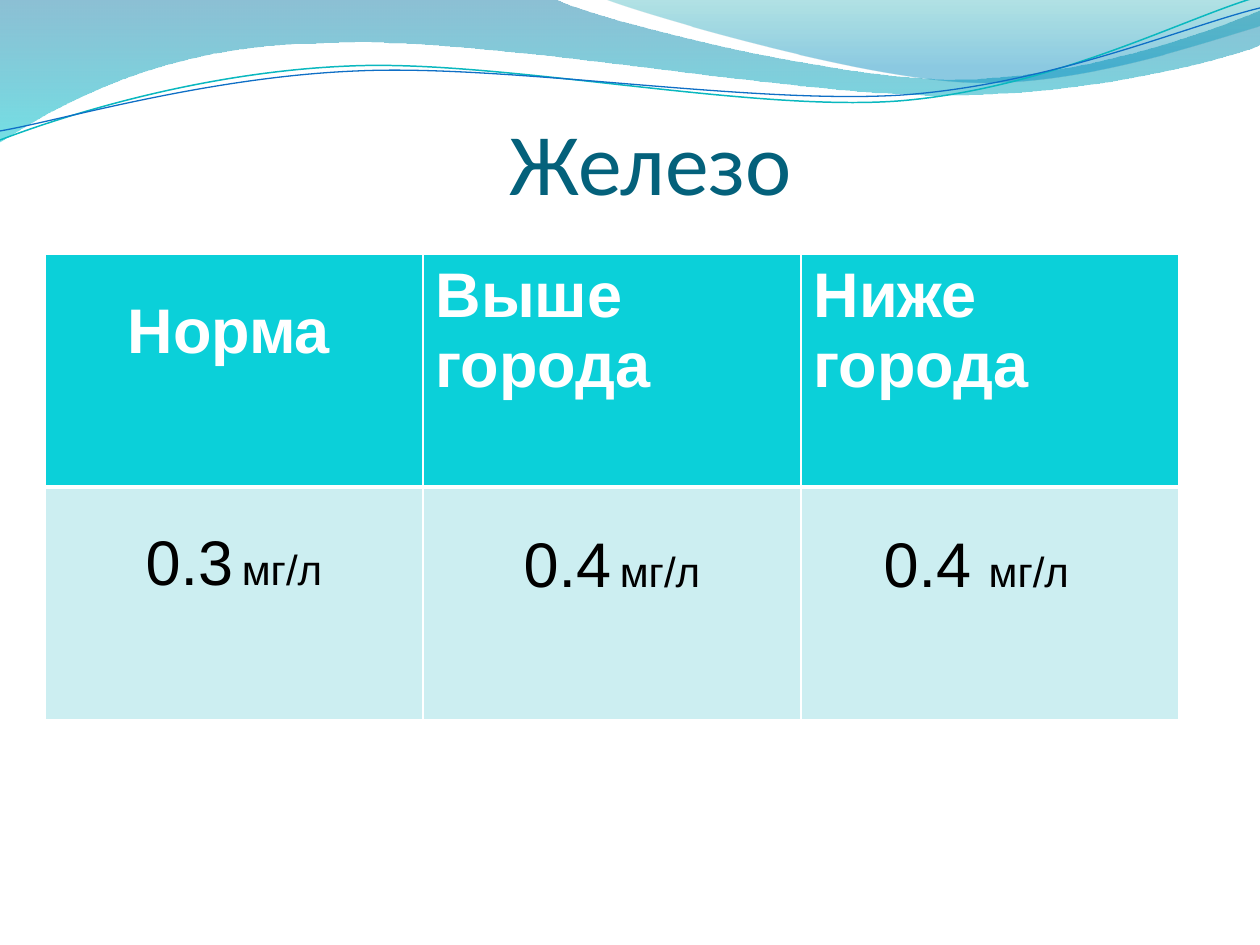
"""Builds the slide on iron content: a wave header, a title and a table."""
from typing import NamedTuple, Optional

from lxml import etree
from pptx import Presentation
from pptx.dml.color import RGBColor
from pptx.enum.text import MSO_ANCHOR, PP_ALIGN
from pptx.oxml.ns import qn
from pptx.util import Pt

BOTTOM = MSO_ANCHOR.BOTTOM
TOP = MSO_ANCHOR.TOP
CENTER = PP_ALIGN.CENTER
PX = 914400 / 126
COLORS = {
    "title": "04617B", "header": "0BD0D9", "body": "CCEEF1",
    "white": "FFFFFF", "black": "000000",
    "deep_blue": "0074A1", "aqua": "00C6CF", "teal": "00A1A9", "sky": "008BBF",
    "teal_line": "0AB8BF", "blue_line": "0F6FC6",
}


class Stop(NamedTuple):
    position: float
    color: str
    opacity: int


class Wave(NamedTuple):
    start: tuple
    segments: tuple
    stops: tuple = ()
    line: Optional[str] = None
    width: float = 0


class Entry(NamedTuple):
    runs: tuple
    indent: int = 0
    top: int = 6


WAVES = (
    Wave((0, -1), (
        (554, -1), (600, 21, 837, 79, 955, 79), (1075, 79, 1207, 33, 1260, 11),
        (1261, 45), (1239, 55, 1096, 96, 940, 95), (784, 95, 481, 35, 324, 43),
        (163, 44, 58, 105, -1, 142), (0, -1)),
        stops=(Stop(0, "deep_blue", 45), Stop(1, "aqua", 55))),
    Wave((604, -1), (
        (641, 14, 859, 78, 969, 82), (1079, 87, 1211, 40, 1260, 26),
        (1260, 0), (604, -1)),
        stops=(Stop(0, "teal", 30), Stop(0.8, "sky", 45))),
    Wave((0, 140), (
        (60, 117, 199, 72, 349, 66), (498, 59, 747, 112, 898, 101),
        (1050, 89, 1182, 19, 1257, -3)), line="teal_line", width=0.85),
    Wave((0, 131), (
        (59, 121, 207, 77, 357, 71), (508, 64, 752, 105, 903, 95),
        (1053, 84, 1186, 26, 1260, 8)), line="blue_line", width=0.75),
)

HEADINGS = (
    Entry((("Норма", 36),), indent=70, top=42),
    Entry((("Выше города", 36),)),
    Entry((("Ниже города", 36),)),
)
READINGS = (
    Entry((("0.3", 36), (" ", 18), ("мг/л", 24)), indent=88, top=42),
    Entry((("0.4", 36), (" ", 18), ("мг/л", 24)), indent=88, top=44),
    Entry((("0.4 ", 36), ("мг/л", 24)), indent=70, top=44),
)


def px(length: float) -> int:
    """Turn pixels into EMU."""
    return round(length * PX)


def rgb(name: str) -> RGBColor:
    """Look up a named colour."""
    return RGBColor.from_string(COLORS[name])


def bend(shape, segments: tuple) -> None:
    """Turn the straight steps of a freeform into its cubic curves."""
    left, top = shape.left, shape.top
    steps = list(shape.element.spPr.iter(qn("a:lnTo")))
    for step, segment in zip(steps, segments):
        if len(segment) == 2:
            continue
        step.tag = qn("a:cubicBezTo")
        controls = (segment[0:2], segment[2:4])
        for index, (x, y) in enumerate(controls):
            point = etree.Element(qn("a:pt"), x=str(px(x) - left), y=str(px(y) - top))
            step.insert(index, point)


def draw_wave(slide, wave: Wave) -> None:
    """Draw a gradient-filled wave or a thin wave line."""
    builder = slide.shapes.build_freeform(*map(px, wave.start))
    ends = [tuple(map(px, segment[-2:])) for segment in wave.segments]
    builder.add_line_segments(ends, close=bool(wave.stops))
    shape = builder.convert_to_shape()
    bend(shape, wave.segments)
    shape.shadow.inherit = False
    if wave.line:
        shape.fill.background()
        shape.line.color.rgb = rgb(wave.line)
        shape.line.width = Pt(wave.width)
        return
    shape.line.fill.background()
    shape.fill.gradient()
    shape.fill.gradient_angle = 270
    for target, stop in zip(shape.fill.gradient_stops, wave.stops):
        target.position = stop.position
        target.color.rgb = rgb(stop.color)
    for color, stop in zip(shape.element.spPr.iter(qn("a:srgbClr")), wave.stops):
        etree.SubElement(color, qn("a:alpha"), val=str(stop.opacity * 1000))


def write_title(slide, text: str) -> None:
    """Place the title above the table."""
    title = slide.shapes.title
    title.left, title.top, title.width, title.height = px(74), px(55), px(1134), px(158)
    frame = title.text_frame
    frame.margin_left = frame.margin_right = frame.margin_bottom = 0
    frame.vertical_anchor = BOTTOM
    frame.text = text
    paragraph = frame.paragraphs[0]
    paragraph.alignment = CENTER
    paragraph.font.name = "Calibri"
    paragraph.font.size = Pt(50)
    paragraph.font.color.rgb = rgb("title")


def set_borders(cell, top: int, bottom: int) -> None:
    """Give a cell white borders, with top and bottom widths in points."""
    properties = cell._tc.get_or_add_tcPr()
    for side, width in (("L", 1), ("R", 1), ("T", top), ("B", bottom)):
        line = etree.SubElement(properties, qn(f"a:ln{side}"), w=str(Pt(width)))
        fill = etree.SubElement(line, qn("a:solidFill"))
        etree.SubElement(fill, qn("a:srgbClr"), val=COLORS["white"])


def write_cell(cell, entry: Entry, fill: str, color: str, bold: bool) -> None:
    """Fill a cell with its runs, indent and colours."""
    cell.fill.solid()
    cell.fill.fore_color.rgb = rgb(fill)
    cell.vertical_anchor = TOP
    cell.margin_top = px(entry.top)
    paragraph = cell.text_frame.paragraphs[0]
    paragraph.font.name = "Arial"
    paragraph.font.bold = bold
    paragraph.font.color.rgb = rgb(color)
    paragraph._p.get_or_add_pPr().set("marL", str(px(entry.indent)))
    for text, size in entry.runs:
        run = paragraph.add_run()
        run.text = text
        run.font.size = Pt(size)


def draw_table(slide) -> None:
    """Draw the table of the norm and the two readings."""
    table = slide.shapes.add_table(
        2, len(HEADINGS), px(45), px(254), px(1134), px(466)).table
    for column, (heading, reading) in enumerate(zip(HEADINGS, READINGS)):
        header, body = table.cell(0, column), table.cell(1, column)
        set_borders(header, top=1, bottom=3)
        set_borders(body, top=3, bottom=1)
        write_cell(header, heading, "header", "white", bold=True)
        write_cell(body, reading, "body", "black", bold=False)


def main() -> None:
    """Build and save the presentation."""
    deck = Presentation()
    deck.slide_width, deck.slide_height = px(1260), px(945)
    slide = deck.slides.add_slide(deck.slide_layouts[5])
    for wave in WAVES:
        draw_wave(slide, wave)
    write_title(slide, " Железо")
    draw_table(slide)
    deck.save("out.pptx")


if __name__ == "__main__":
    main()
